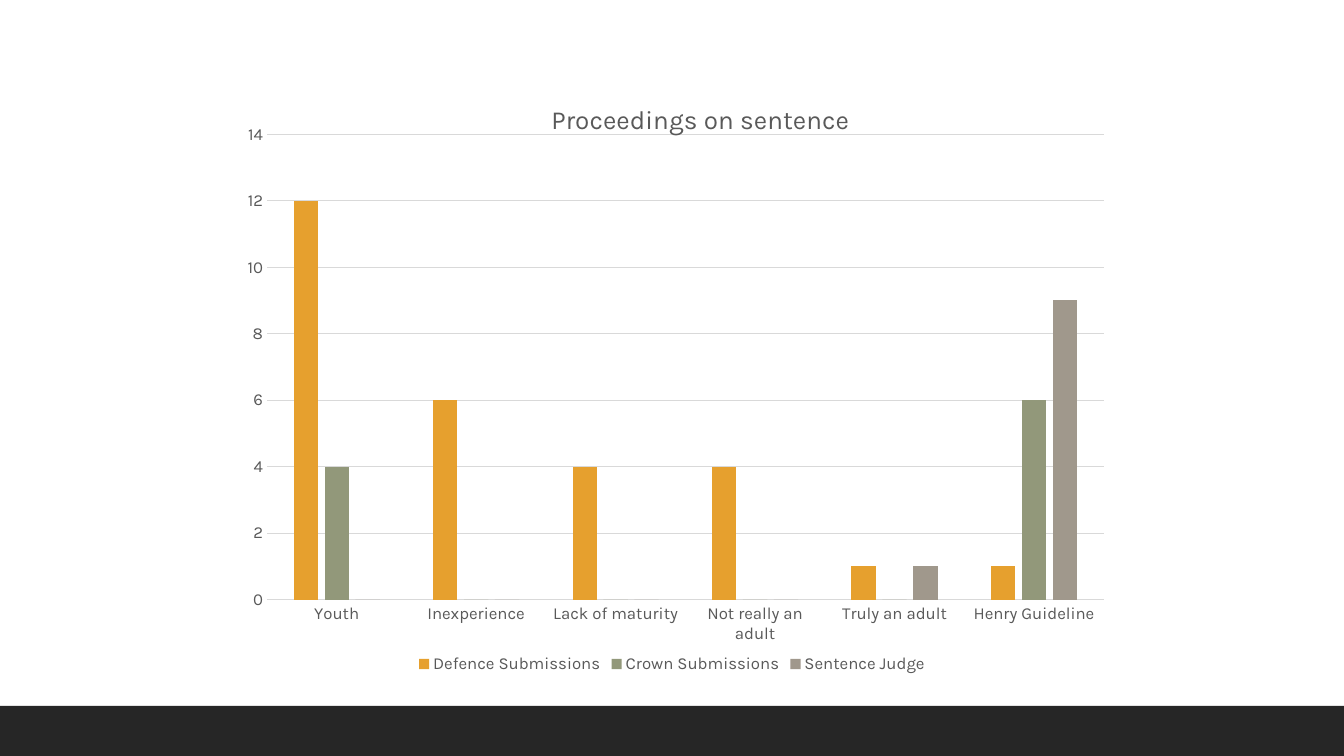
from lxml import etree
from pptx import Presentation
from pptx.chart.data import CategoryChartData
from pptx.dml.color import RGBColor
from pptx.enum.chart import XL_CHART_TYPE, XL_LEGEND_POSITION, XL_TICK_MARK
from pptx.enum.shapes import MSO_SHAPE
from pptx.oxml.ns import qn
from pptx.util import Pt

PX = 914400 / 100.8
FONT = "Karla"
COLORS = {
    "footer": "262626",
    "text": "595959",
    "grid": "D9D9D9",
    "Defence Submissions": "E6A02E",
    "Crown Submissions": "92987A",
    "Sentence Judge": "A0988C",
}
NO_TICK = XL_TICK_MARK.NONE
SERIES = {
    "Defence Submissions": (12, 6, 4, 4, 1, 1),
    "Crown Submissions": (4, 0, 0, 0, 0, 6),
    "Sentence Judge": (0, 0, 0, 0, 1, 9),
}


def style_font(font, size):
    font.name = FONT
    font.size = Pt(size)
    font.bold = False
    font.color.rgb = RGBColor.from_string(COLORS["text"])


def set_layout(parent, **settings):
    """Give a chart part a manual layout, in fractions of the chart."""
    layout = parent.find(qn("c:layout"))
    if layout is None:
        layout = etree.Element(qn("c:layout"))
        parent.insert(0, layout)
    manual = etree.SubElement(layout, qn("c:manualLayout"))
    for name, value in settings.items():
        etree.SubElement(manual, qn("c:" + name)).set("val", str(value))


deck = Presentation()
deck.slide_width = round(1344 * PX)
deck.slide_height = round(756 * PX)
page = deck.slides.add_slide(deck.slide_layouts[6])

# Footer band
footer = page.shapes.add_shape(
    MSO_SHAPE.RECTANGLE, 0, round(706 * PX), deck.slide_width, round(50 * PX))
footer.shadow.inherit = False
footer.fill.solid()
footer.fill.fore_color.rgb = RGBColor.from_string(COLORS["footer"])
footer.line.fill.background()

# Chart
data = CategoryChartData()
data.categories = ["Youth", "Inexperience", "Lack of maturity",
                   "Not really an adult", "Truly an adult", "Henry Guideline"]
for name, values in SERIES.items():
    data.add_series(name, values)
chart = page.shapes.add_chart(
    XL_CHART_TYPE.COLUMN_CLUSTERED, round(224 * PX), round(80 * PX),
    round(896 * PX), round(598 * PX), data).chart
style_font(chart.font, 12)

plot = chart.plots[0]
plot.gap_width = 219
plot.overlap = -27
plot.vary_by_categories = False
for series in plot.series:
    series.format.fill.solid()
    series.format.fill.fore_color.rgb = RGBColor.from_string(COLORS[series.name])
set_layout(chart.element.find(".//" + qn("c:plotArea")),
           layoutTarget="inner", xMode="edge", yMode="edge",
           x=0.048, y=0.091, w=0.934, h=0.778)

# Title
chart.has_title = True
title = chart.chart_title
title.include_in_layout = True
span = title.text_frame.paragraphs[0].add_run()
span.text = "Proceedings on sentence"
style_font(span.font, 18.6)
set_layout(title.element, xMode="edge", yMode="edge", x=0.36, y=0.03)

# Axes
category_axis, value_axis = chart.category_axis, chart.value_axis
for axis in (category_axis, value_axis):
    axis.major_tick_mark = NO_TICK
    axis.minor_tick_mark = NO_TICK
    style_font(axis.tick_labels.font, 12)
value_axis.minimum_scale = 0
value_axis.maximum_scale = 14
value_axis.major_unit = 2
value_axis.has_major_gridlines = True
value_axis.format.line.fill.background()
for line in (category_axis.format.line, value_axis.major_gridlines.format.line):
    line.color.rgb = RGBColor.from_string(COLORS["grid"])
    line.width = Pt(0.75)

# Legend
chart.has_legend = True
chart.legend.position = XL_LEGEND_POSITION.BOTTOM
chart.legend.include_in_layout = False
style_font(chart.legend.font, 12)

deck.save("out.pptx")
